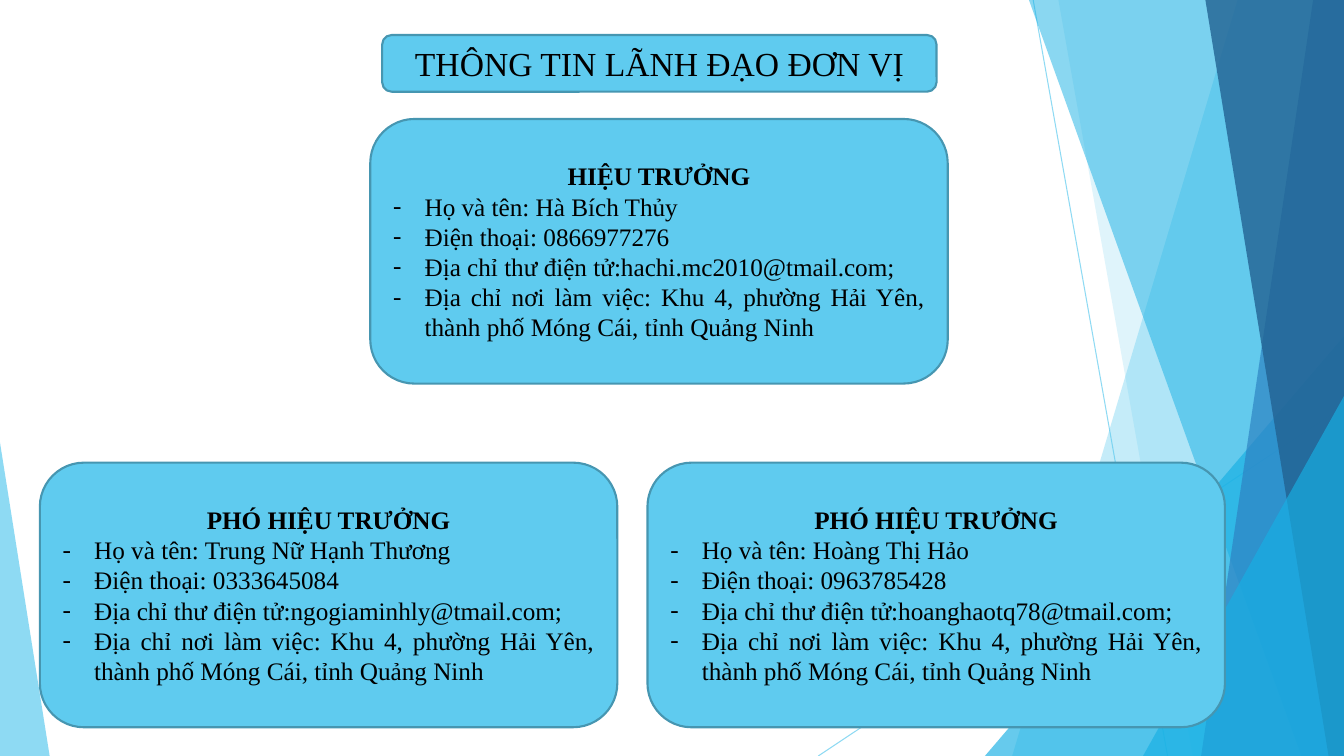
from pptx import Presentation
from pptx.util import Pt
from pptx.dml.color import RGBColor as RGB
from pptx.enum.shapes import MSO_CONNECTOR as Link, MSO_SHAPE as Kind
from pptx.enum.text import MSO_ANCHOR as Anchor, PP_ALIGN as Align
from pptx.oxml.ns import qn
from lxml.etree import SubElement as sub

WIDE, HIGH = 960, 540
FONT = "Times New Roman"
INDENT = 22.5
COLORS = {"sky": "5FCBEF", "cyan": "17B0E4", "blue": "2E83C3",
          "navy": "226292", "edge": "4696B1", "text": "000000"}

TITLE = "THÔNG TIN LÃNH ĐẠO ĐƠN VỊ"
TITLE_BOX = (273, 25, 396, 40.5)
LABELS = ("Họ và tên: ", "Điện thoại: ", "Địa chỉ thư điện tử:", "Địa chỉ nơi làm việc: ")
PLACE = "Khu 4, phường Hải Yên, thành phố Móng Cái, tỉnh Quảng Ninh"
CARD = (412.5, 189)
LEADERS = [  # left, top, role, name, phone, mail
    (264.5, 85, "HIỆU TRƯỞNG", "Hà Bích Thủy", "0866977276", "hachi.mc2010@tmail.com;"),
    (28.5, 330.5, "PHÓ HIỆU TRƯỞNG", "Trung Nữ Hạnh Thương", "0333645084",
     "ngogiaminhly@tmail.com;"),
    (462.5, 330.5, "PHÓ HIỆU TRƯỞNG", "Hoàng Thị Hảo", "0963785428",
     "hoanghaotq78@tmail.com;"),
]

RAYS = [(738, 0, 834, 540), (960, 290, 584.5, 540)]
DECOR = [  # band: top x, bottom x; wedge: left, top, width, apex
    ("band", (884, 723), "sky", 36),
    ("band", (756, 852), "sky", 20),
    ("wedge", (703.5, 240, 256.5, 1), "cyan", 66),
    ("band", (735, 929.5), "cyan", 50),
    ("band", (938, 858), "blue", 70),
    ("band", (861, 949), "navy", 80),
    ("wedge", (816.5, 283, 143.5, 1), "cyan", 66),
    ("wedge", (0, 316, 35.5, 0), "sky", 70),
]

deck = Presentation()
deck.slide_width, deck.slide_height = Pt(WIDE), Pt(HIGH)
slide = deck.slides.add_slide(deck.slide_layouts[6])
shapes = slide.shapes


def color(name):
    return RGB.from_string(COLORS[name])


def fade(item, alpha):
    """Set the opacity, in percent, of the first colour of a shape or line."""
    tint = next(item._element.spPr.iter(qn("a:srgbClr")))
    sub(tint, qn("a:alpha"), val=str(alpha * 1000))


def add_ray(x1, y1, x2, y2):
    ray = shapes.add_connector(Link.STRAIGHT, Pt(x1), Pt(y1), Pt(x2), Pt(y2))
    ray.line.width = Pt(0.75)
    ray.line.color.rgb = color("sky")
    fade(ray, 70)
    sub(ray._element.spPr, qn("a:effectLst"))


def add_band(top, base):
    """Draw a full-height band from a slanted left side to the right edge."""
    pen = shapes.build_freeform(Pt(top), 0)
    pen.add_line_segments([(Pt(WIDE), 0), (Pt(WIDE), Pt(HIGH)), (Pt(base), Pt(HIGH))])
    return pen.convert_to_shape()


def add_wedge(left, top, width, apex):
    wedge = shapes.add_shape(Kind.ISOSCELES_TRIANGLE, Pt(left), Pt(top),
                             Pt(width), Pt(HIGH - top))
    wedge.adjustments[0] = apex
    return wedge


def add_box(left, top, width, height):
    box = shapes.add_shape(Kind.ROUNDED_RECTANGLE, Pt(left), Pt(top), Pt(width), Pt(height))
    box.shadow.inherit = False
    box.fill.solid()
    box.fill.fore_color.rgb = color("sky")
    box.line.color.rgb = color("edge")
    box.line.width = Pt(1.5)
    frame = box.text_frame
    frame.word_wrap = True
    frame.vertical_anchor = Anchor.MIDDLE
    return frame


def write(para, text, size, align=Align.CENTER, bold=False):
    para.alignment = align
    run = para.add_run()
    run.text = text
    font = run.font
    font.name, font.size, font.bold = FONT, Pt(size), bold
    font.color.rgb = color("text")


def add_dash(para):
    props = para._p.get_or_add_pPr()
    props.set("marL", str(Pt(INDENT)))
    props.set("indent", str(-Pt(INDENT)))
    sub(props, qn("a:buFont"), typeface=FONT)
    sub(props, qn("a:buChar"), char="-")


for ray in RAYS:
    add_ray(*ray)

for kind, spots, tone, alpha in DECOR:
    part = add_band(*spots) if kind == "band" else add_wedge(*spots)
    part.shadow.inherit = False
    part.fill.solid()
    part.fill.fore_color.rgb = color(tone)
    part.line.fill.background()
    fade(part, alpha)

write(add_box(*TITLE_BOX).paragraphs[0], TITLE, 24)

for left, top, role, *facts in LEADERS:
    frame = add_box(left, top, *CARD)
    write(frame.paragraphs[0], role, 18, bold=True)
    for label, fact in zip(LABELS, facts + [PLACE]):
        para = frame.add_paragraph()
        write(para, label + fact, 18, Align.JUSTIFY)
        add_dash(para)

deck.save("out.pptx")
